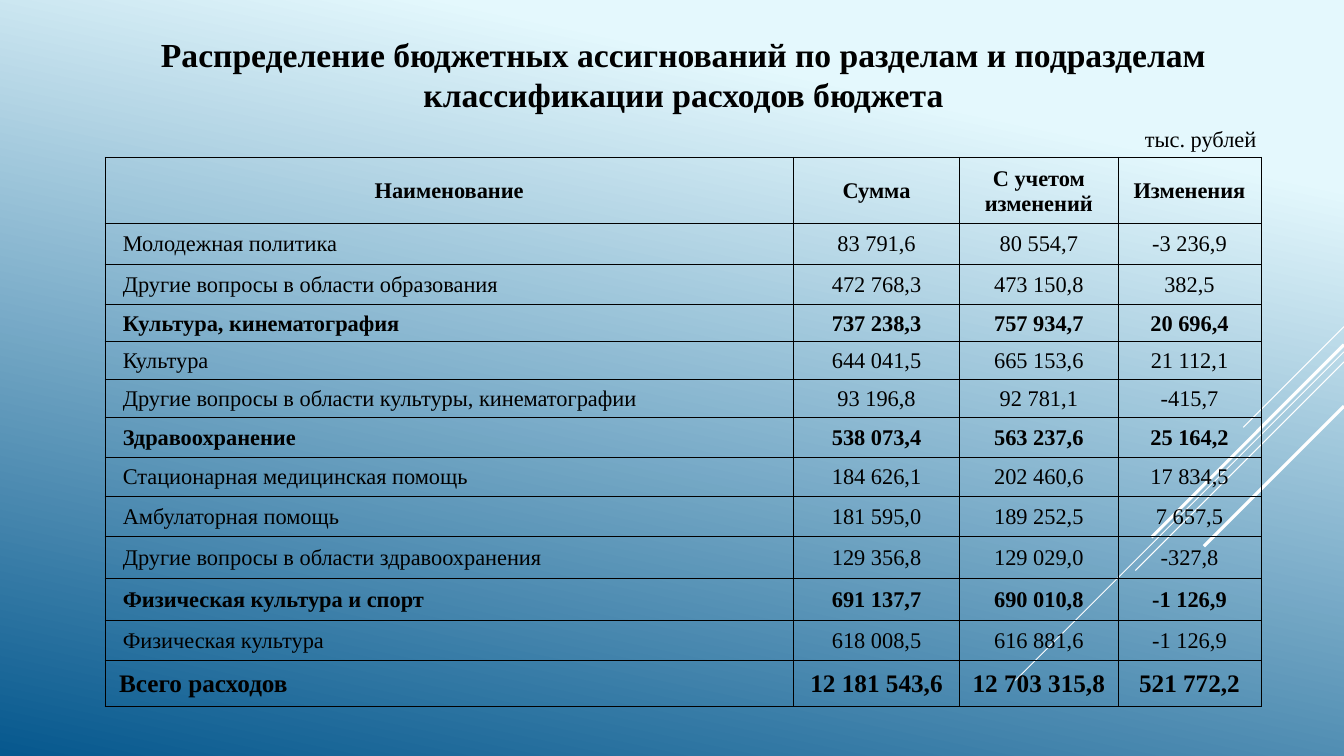
from dataclasses import dataclass

from lxml.etree import SubElement
from pptx import Presentation
from pptx.dml.color import RGBColor
from pptx.enum.shapes import MSO_CONNECTOR
from pptx.enum.text import MSO_ANCHOR, MSO_AUTO_SIZE, PP_ALIGN
from pptx.oxml.ns import qn
from pptx.util import Inches, Pt


@dataclass(frozen=True)
class Theme:
    """Colours, type sizes, line widths and grid of the deck."""
    font: str = "Times New Roman"
    ink: str = "000000"
    ray: str = "FFFFFF"
    light: str = "E4F8FD"
    dark: str = "06588E"
    light_stop: float = 0.18
    gradient_angle: int = 258
    title_size: int = 24
    total_size: int = 18
    body_size: int = 16
    border: float = 0.5
    columns: int = 160
    rows: int = 90


HEADINGS = ("Наименование", "Сумма", "С учетом изменений", "Изменения")
BUDGET = (
    ("Молодежная политика", "83 791,6", "80 554,7", "-3 236,9"),
    ("Другие вопросы в области образования", "472 768,3", "473 150,8", "382,5"),
    ("Культура, кинематография", "737 238,3", "757 934,7", "20 696,4"),
    ("Культура", "644 041,5", "665 153,6", "21 112,1"),
    ("Другие вопросы в области культуры, кинематографии", "93 196,8", "92 781,1", "-415,7"),
    ("Здравоохранение", "538 073,4", "563 237,6", "25 164,2"),
    ("Стационарная медицинская помощь", "184 626,1", "202 460,6", "17 834,5"),
    ("Амбулаторная помощь", "181 595,0", "189 252,5", "7 657,5"),
    ("Другие вопросы в области здравоохранения", "129 356,8", "129 029,0", "-327,8"),
    ("Физическая культура и спорт", "691 137,7", "690 010,8", "-1 126,9"),
    ("Физическая культура", "618 008,5", "616 881,6", "-1 126,9"),
)
TOTAL = ("Всего расходов", "12 181 543,6", "12 703 315,8", "521 772,2")
SECTIONS = {"Культура, кинематография", "Здравоохранение", "Физическая культура и спорт"}
COLUMN_WIDTHS = (81.96, 19.8, 18.84, 17.04)
ROW_HEIGHTS = (7.92, 4.8, 4.8, 4.44, 4.44, 4.56, 4.8, 4.56, 4.8, 5.04, 5.04, 4.68, 5.52)
RAYS = ((38.88, 12, 0.75), (41.88, 39.12, 0.75), (43.08, 24.84, 0.75),
        (41.04, 22.92, 2.25), (48.36, 16.68, 2.25))


def write(frame, text, *, font, color, size, bold=False, align=PP_ALIGN.LEFT):
    """Put one formatted paragraph into a text frame."""
    para = frame.paragraphs[0]
    para.alignment = align
    span = para.add_run()
    span.text = text
    span.font.name = font
    span.font.size = Pt(size)
    span.font.bold = bold
    span.font.color.rgb = RGBColor.from_string(color)


class Page:
    """The current slide, drawn on the grid in the theme's style."""

    def __init__(self, deck, theme):
        """Add a title-only slide to the deck."""
        self.theme = theme
        self.slide = deck.slides.add_slide(deck.slide_layouts[5])
        self.column = deck.slide_width / theme.columns
        self.row = deck.slide_height / theme.rows

    def across(self, columns):
        """Turn grid columns into a length."""
        return round(columns * self.column)

    def down(self, rows):
        """Turn grid rows into a length."""
        return round(rows * self.row)

    def text(self, frame, text, **style):
        """Write text in the theme's font and ink."""
        write(frame, text, font=self.theme.font, color=self.theme.ink, **style)

    def background(self):
        """Fill the slide with the theme's gradient."""
        fill = self.slide.background.fill
        fill.gradient()
        fill.gradient_angle = self.theme.gradient_angle
        stops = ((self.theme.light, self.theme.light_stop), (self.theme.dark, 1))
        for stop, (color, position) in zip(fill.gradient_stops, stops):
            stop.color.rgb = RGBColor.from_string(color)
            stop.position = position

    def title(self, text, left, top, width, height):
        """Move and fill the title placeholder."""
        box = self.slide.shapes.title
        box.left, box.top = self.across(left), self.down(top)
        box.width, box.height = self.across(width), self.down(height)
        frame = box.text_frame
        frame.word_wrap = True
        frame.auto_size = MSO_AUTO_SIZE.NONE
        frame.vertical_anchor = MSO_ANCHOR.MIDDLE
        self.text(frame, text, size=self.theme.title_size, bold=True, align=PP_ALIGN.CENTER)

    def label(self, text, left, top, width, height):
        """Add a plain text box."""
        box = self.slide.shapes.add_textbox(
            self.across(left), self.down(top), self.across(width), self.down(height))
        box.text_frame.word_wrap = True
        self.text(box.text_frame, text, size=self.theme.body_size)

    def ray(self, start_row, run, weight):
        """Draw a diagonal line down and left from the right edge."""
        edge = self.theme.columns
        line = self.slide.shapes.add_connector(
            MSO_CONNECTOR.STRAIGHT, self.across(edge), self.down(start_row),
            self.across(edge - run), self.down(start_row + run))
        line.line.color.rgb = RGBColor.from_string(self.theme.ray)
        line.line.width = Pt(weight)
        SubElement(line.element.spPr, qn("a:effectLst"))

    def table(self, left, top, widths, heights):
        """Add an unbanded table with the given grid sizes."""
        table = self.slide.shapes.add_table(
            len(heights), len(widths), self.across(left), self.down(top),
            self.across(sum(widths)), self.down(sum(heights))).table
        table.first_row = table.horz_banding = False
        for column, width in zip(table.columns, widths):
            column.width = self.across(width)
        for row, height in zip(table.rows, heights):
            row.height = self.down(height)
        return table

    def borders(self, cell):
        """Rule all four sides of a cell."""
        properties = cell._tc.get_or_add_tcPr()
        for side in ("lnL", "lnR", "lnT", "lnB"):
            line = SubElement(properties, qn(f"a:{side}"), w=str(Pt(self.theme.border)))
            fill = SubElement(line, qn("a:solidFill"))
            SubElement(fill, qn("a:srgbClr"), val=self.theme.ink)

    def fill_row(self, cells, texts, indent=None, **style):
        """Write a table row, with its first cell indented if asked."""
        for index, (cell, text) in enumerate(zip(cells, texts)):
            indented = index == 0 and indent is not None
            self.borders(cell)
            cell.fill.background()
            cell.vertical_anchor = MSO_ANCHOR.MIDDLE
            cell.margin_left = self.across(indent if indented else 0.12)
            cell.margin_right = self.across(0.12)
            cell.margin_top, cell.margin_bottom = self.down(0.12), 0
            self.text(cell.text_frame, text,
                      align=PP_ALIGN.JUSTIFY if indented else PP_ALIGN.CENTER, **style)


def main():
    """Build the budget slide and save it."""
    theme = Theme()
    deck = Presentation()
    deck.slide_width, deck.slide_height = Inches(13.33), Inches(7.5)
    page = Page(deck, theme)
    page.background()
    for ray in RAYS:
        page.ray(*ray)
    page.title("Распределение бюджетных ассигнований по разделам и подразделам "
               "классификации расходов бюджета", 17.64, 3.36, 127.44, 10.92)
    table = page.table(12.5, 18.72, COLUMN_WIDTHS, ROW_HEIGHTS)
    heading, *lines, total = (row.cells for row in table.rows)
    page.fill_row(heading, HEADINGS, size=theme.body_size, bold=True)
    for cells, texts in zip(lines, BUDGET):
        page.fill_row(cells, texts, indent=2.12, size=theme.body_size, bold=texts[0] in SECTIONS)
    page.fill_row(total, TOTAL, indent=1.68, size=theme.total_size, bold=True)
    page.label("тыс. рублей", 135.12, 14.28, 19.8, 4.44)
    deck.save("out.pptx")


if __name__ == "__main__":
    main()
